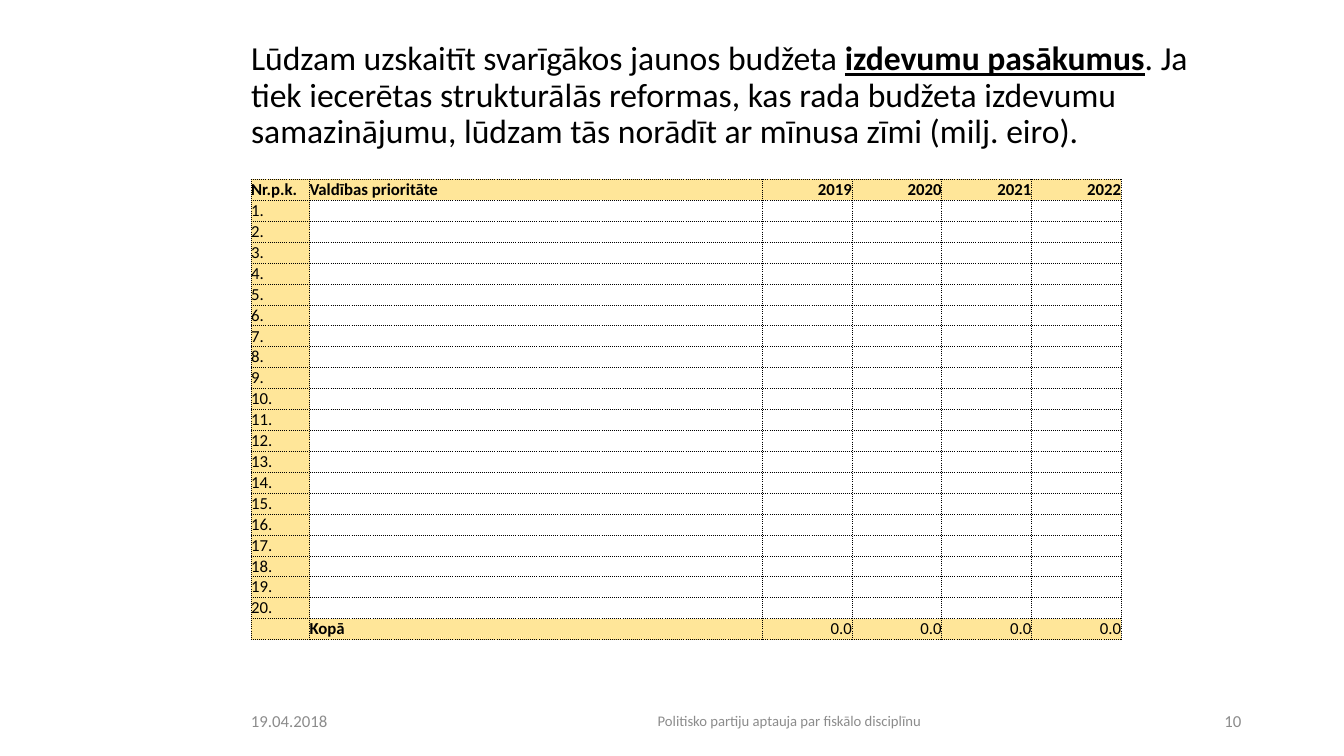
import dataclasses

import lxml.etree
import pptx
import pptx.dml.color
import pptx.enum.text
import pptx.oxml.ns
import pptx.util

ALIGN = pptx.enum.text.PP_ALIGN
ANCHOR = pptx.enum.text.MSO_ANCHOR


@dataclasses.dataclass(frozen=True)
class Theme:
    font: str = "Calibri"
    ink: str = "000000"
    muted: str = "8C8C8C"
    accent: str = "FFE699"
    title_size: float = 24
    body_size: float = 12
    footer_size: float = 10.5
    border_width: float = 0.5


def apply(target, formats):
    for name, value in formats.items():
        setattr(target, name, value)


class SlideBuilder:
    def __init__(self, presentation, theme):
        self.theme = theme
        self.width = presentation.slide_width
        self.height = presentation.slide_height
        self.slide = presentation.slides.add_slide(presentation.slide_layouts[5])

    def across(self, percent):
        return round(self.width * percent / 100)

    def down(self, percent):
        return round(self.height * percent / 100)

    def box(self, left, top, width, height):
        return self.across(left), self.down(top), self.across(width), self.down(height)

    def add_text(self, paragraph, text, size, color, **formats):
        run = paragraph.add_run()
        run.text = text
        font = {"name": self.theme.font, "size": pptx.util.Pt(size), **formats}
        apply(run.font, font)
        run.font.color.rgb = pptx.dml.color.RGBColor.from_string(color)

    def title(self, area, parts):
        shape = self.slide.shapes.title
        apply(shape, dict(zip(("left", "top", "width", "height"), self.box(*area))))
        frame = shape.text_frame
        apply(frame, {"word_wrap": True, "vertical_anchor": ANCHOR.MIDDLE,
                      "auto_size": pptx.enum.text.MSO_AUTO_SIZE.NONE})
        paragraph = frame.paragraphs[0]
        apply(paragraph, {"alignment": ALIGN.LEFT, "line_spacing": 0.9})
        for text, formats in parts:
            self.add_text(paragraph, text, self.theme.title_size, self.theme.ink, **formats)

    def footer(self, left, width, text, size, alignment):
        shape = self.slide.shapes.add_textbox(*self.box(left, 92.67, width, 5.33))
        frame = shape.text_frame
        apply(frame, {"word_wrap": True, "vertical_anchor": ANCHOR.MIDDLE})
        paragraph = frame.paragraphs[0]
        paragraph.alignment = alignment
        self.add_text(paragraph, text, size, self.theme.muted)

    def borders(self, cell):
        properties = cell._tc.get_or_add_tcPr()
        qualified = pptx.oxml.ns.qn
        for side in ("L", "R", "T", "B"):
            line = lxml.etree.SubElement(
                properties, qualified(f"a:ln{side}"),
                w=str(pptx.util.Pt(self.theme.border_width)))
            fill = lxml.etree.SubElement(line, qualified("a:solidFill"))
            lxml.etree.SubElement(fill, qualified("a:srgbClr"), val=self.theme.ink)
            lxml.etree.SubElement(line, qualified("a:prstDash"), val="dot")

    def cell(self, cell, text, shaded, bold, alignment, anchor):
        apply(cell, {"margin_left": 0, "margin_right": 0, "margin_top": 0,
                     "margin_bottom": 0, "vertical_anchor": anchor})
        self.borders(cell)
        if shaded:
            cell.fill.solid()
            cell.fill.fore_color.rgb = pptx.dml.color.RGBColor.from_string(self.theme.accent)
        else:
            cell.fill.background()
        paragraph = cell.text_frame.paragraphs[0]
        paragraph.alignment = alignment
        if text:
            self.add_text(paragraph, text, self.theme.body_size, self.theme.ink, bold=bold)
        else:
            lxml.etree.SubElement(paragraph._p, pptx.oxml.ns.qn("a:endParaRPr"),
                                  sz=str(round(self.theme.body_size * 100)))

    def table(self, left, top, height, column_widths, rows):
        area = self.box(left, top, sum(column_widths), height)
        table = self.slide.shapes.add_table(len(rows), len(column_widths), *area).table
        apply(table, {"first_row": False, "horz_banding": False})
        for column, width in zip(table.columns, column_widths):
            column.width = self.across(width)
        last = len(rows) - 1
        for row_index, values in enumerate(rows):
            table.rows[row_index].height = self.down(height / len(rows))
            header = row_index == 0
            for column_index, text in enumerate(values):
                self.cell(
                    table.cell(row_index, column_index), text,
                    shaded=row_index in (0, last) or column_index == 0,
                    bold=header or (row_index == last and column_index == 1),
                    alignment=ALIGN.RIGHT if column_index > 1 else ALIGN.LEFT,
                    anchor=ANCHOR.BOTTOM if header else ANCHOR.MIDDLE)


def main():
    presentation = pptx.Presentation()
    apply(presentation, {"slide_width": pptx.util.Inches(13.33),
                         "slide_height": pptx.util.Inches(7.5)})
    theme = Theme()
    builder = SlideBuilder(presentation, theme)
    builder.title((17.93, 5.33, 75.17, 14.8), [
        ("Lūdzam uzskaitīt svarīgākos jaunos budžeta ", {}),
        ("izdevumu pasākumus", {"bold": True, "underline": True}),
        (". Ja tiek iecerētas strukturālās reformas, kas rada budžeta izdevumu "
         "samazinājumu, lūdzam tās norādīt ar mīnusa zīmi (milj. eiro).", {}),
    ])
    years = [str(year) for year in range(2019, 2023)]
    rows = [["Nr.p.k.", "Valdības prioritāte", *years]]
    rows += [[f"{number}."] + [""] * (len(years) + 1) for number in range(1, 21)]
    rows.append(["", "Kopā"] + ["0.0"] * len(years))
    builder.table(18.68, 23.73, 60.93, [4.35, 33.68] + [6.68] * len(years), rows)
    builder.footer(17.93, 12.3, "19.04.2018", theme.body_size, ALIGN.LEFT)
    builder.footer(32.33, 52.81, "Politisko partiju aptauja par fiskālo disciplīnu",
                   theme.footer_size, ALIGN.CENTER)
    builder.footer(87.17, 5.93, "10", theme.body_size, ALIGN.RIGHT)
    presentation.save("out.pptx")


if __name__ == "__main__":
    main()
